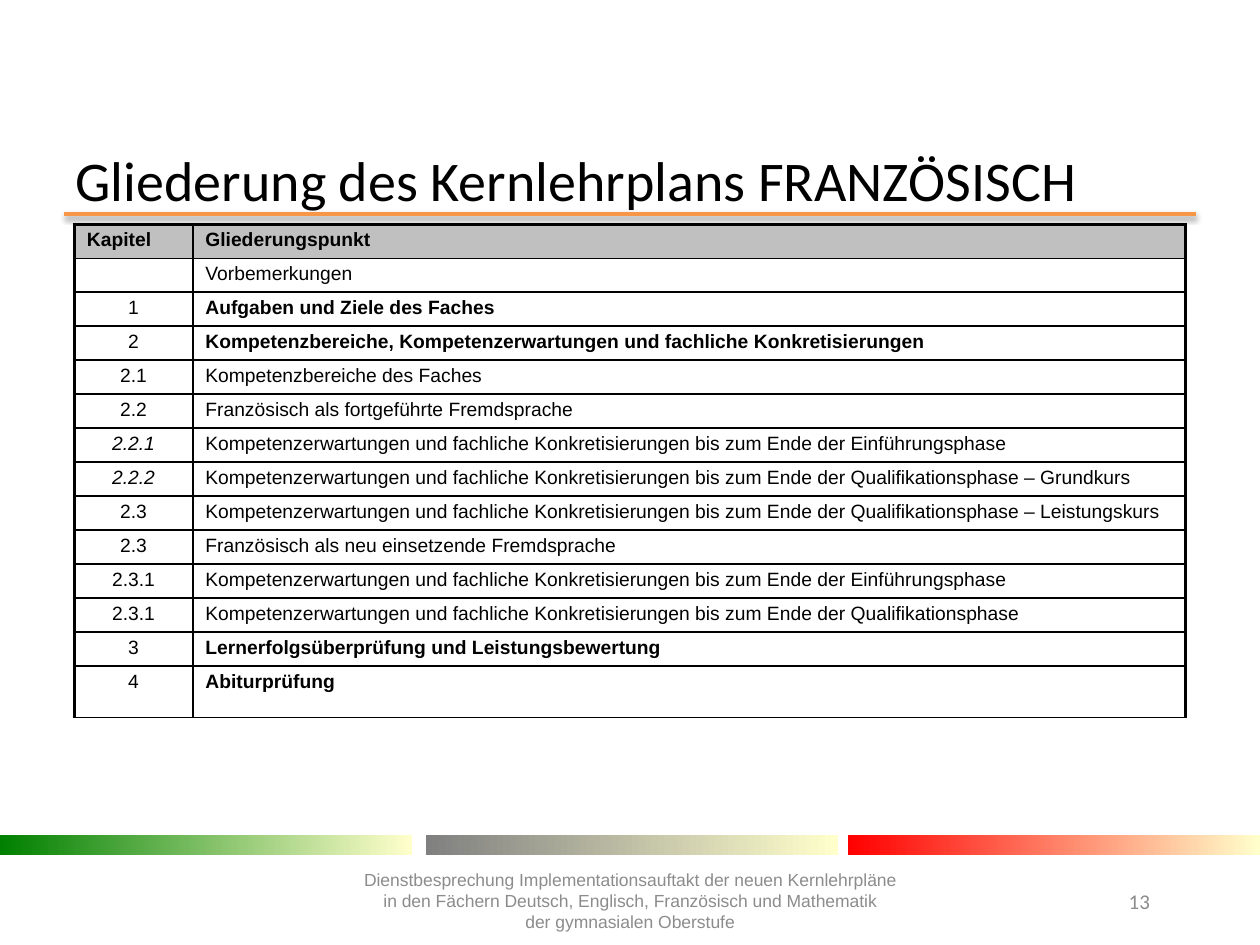
from lxml import etree
from pptx import Presentation
from pptx import util as u
from pptx.dml.color import RGBColor
from pptx.enum import shapes, text
from pptx.oxml import ns

BLACK = RGBColor(0x00, 0x00, 0x00)
FOOTER_GREY = RGBColor(0x8C, 0x8C, 0x8C)
HEADER_GREY = RGBColor(0xC0, 0xC0, 0xC0)
ORANGE = RGBColor(0xF7, 0x96, 0x46)
GREEN = RGBColor(0x00, 0x80, 0x00)
GREY = RGBColor(0x80, 0x80, 0x80)
RED = RGBColor(0xFF, 0x00, 0x00)
CREAM = RGBColor(0xFF, 0xFF, 0xCC)

EXPECTATIONS = "Kompetenzerwartungen und fachliche Konkretisierungen bis zum Ende der "
# chapter, heading, chapter is italic, heading is bold
CHAPTERS = [
    ("", "Vorbemerkungen", False, False),
    ("1", "Aufgaben und Ziele des Faches", False, True),
    ("2", "Kompetenzbereiche, Kompetenzerwartungen und fachliche Konkretisierungen", False, True),
    ("2.1", "Kompetenzbereiche des Faches", False, False),
    ("2.2", "Französisch als fortgeführte Fremdsprache", False, False),
    ("2.2.1", EXPECTATIONS + "Einführungsphase", True, False),
    ("2.2.2", EXPECTATIONS + "Qualifikationsphase – Grundkurs", True, False),
    ("2.3", EXPECTATIONS + "Qualifikationsphase – Leistungskurs", False, False),
    ("2.3", "Französisch als neu einsetzende Fremdsprache", False, False),
    ("2.3.1", EXPECTATIONS + "Einführungsphase", False, False),
    ("2.3.1", EXPECTATIONS + "Qualifikationsphase", False, False),
    ("3", "Lernerfolgsüberprüfung und Leistungsbewertung", False, True),
    ("4", "Abiturprüfung", False, True),
]
FOOTER = (
    "Dienstbesprechung Implementationsauftakt der neuen Kernlehrpläne\v"
    "in den Fächern Deutsch, Englisch, Französisch und Mathematik\v"
    "der gymnasialen Oberstufe"
)


def add_element(parent, tag, **attributes):
    return etree.SubElement(parent, ns.qn(tag), {k: str(v) for k, v in attributes.items()})


class SlideBuilder:
    heading_font = "Calibri"
    body_font = "Arial"
    thin, thick = u.Pt(1), u.Pt(2.25)

    def __init__(self, slide):
        self.slide = slide

    def set_text(self, frame, content, size, font, color=BLACK, align=text.PP_ALIGN.LEFT,
                 bold=False, italic=False):
        paragraph = frame.paragraphs[0]
        paragraph.text = content
        paragraph.alignment = align
        paragraph.font.size = u.Pt(size)
        paragraph.font.name = font
        paragraph.font.color.rgb = color
        paragraph.font.bold = bold
        paragraph.font.italic = italic
        if not content:
            add_element(paragraph._p, "a:endParaRPr", sz=size * 100)

    def title(self, content, left, top, width, height):
        title = self.slide.shapes.title
        title.left, title.top = u.Inches(left), u.Inches(top)
        title.width, title.height = u.Inches(width), u.Inches(height)
        frame = title.text_frame
        frame.auto_size = text.MSO_AUTO_SIZE.NONE
        frame.vertical_anchor = text.MSO_ANCHOR.MIDDLE
        self.set_text(frame, content, 32, self.heading_font)

    def text_box(self, content, left, top, width, height, size, font, align, anchor):
        box = self.slide.shapes.add_textbox(
            u.Inches(left), u.Inches(top), u.Inches(width), u.Inches(height))
        box.text_frame.word_wrap = True
        box.text_frame.vertical_anchor = anchor
        self.set_text(box.text_frame, content, size, font, FOOTER_GREY, align)

    def shadowed_rule(self, left, right, y):
        rule = self.slide.shapes.add_connector(
            shapes.MSO_CONNECTOR.STRAIGHT,
            u.Inches(left), u.Inches(y), u.Inches(right), u.Inches(y))
        rule.line.color.rgb = ORANGE
        rule.line.width = u.Pt(2)
        effects = add_element(rule._element.spPr, "a:effectLst")
        shadow = add_element(effects, "a:outerShdw", blurRad=u.Pt(3.1), dist=u.Pt(1.6),
                             dir=90 * 60000, rotWithShape=0)
        color = add_element(shadow, "a:srgbClr", val=BLACK)
        add_element(color, "a:alpha", val=38000)

    def gradient_bar(self, left, top, width, height, start_color):
        bar = self.slide.shapes.add_shape(
            shapes.MSO_SHAPE.RECTANGLE,
            u.Inches(left), u.Inches(top), u.Inches(width), u.Inches(height))
        bar.shadow.inherit = False
        bar.line.fill.background()
        bar.fill.gradient()
        bar.fill.gradient_angle = 0
        for stop, color, position in zip(bar.fill.gradient_stops, (start_color, CREAM), (0, 1)):
            stop.color.rgb = color
            stop.position = position

    def borders(self, cell, left, right, top, bottom):
        properties = cell._tc.get_or_add_tcPr()
        for side, width in zip("LRTB", (left, right, top, bottom)):
            line = add_element(properties, f"a:ln{side}", w=width)
            fill = add_element(line, "a:solidFill")
            add_element(fill, "a:srgbClr", val=BLACK)

    def cell(self, cell, content, is_header, is_first_column, **style):
        cell.margin_top = cell.margin_bottom = u.Inches(0.04)
        self.borders(
            cell,
            left=self.thick if is_first_column else self.thin,
            right=self.thin if is_first_column else self.thick,
            top=self.thick if is_header else self.thin,
            bottom=self.thin)
        if is_header:
            cell.fill.solid()
            cell.fill.fore_color.rgb = HEADER_GREY
        else:
            cell.fill.background()
        self.set_text(cell.text_frame, content, 11, self.body_font, **style)

    def chapter_table(self, left, top, column_widths, row_height, last_row_height):
        row_count = len(CHAPTERS) + 1
        height = row_height * (row_count - 1) + last_row_height
        table = self.slide.shapes.add_table(
            row_count, 2, u.Inches(left), u.Inches(top),
            u.Inches(sum(column_widths)), u.Inches(height)).table
        table.first_row = table.horz_banding = False
        for column, width in zip(table.columns, column_widths):
            column.width = u.Inches(width)
        for row in table.rows:
            row.height = u.Inches(row_height)
        table.rows[row_count - 1].height = u.Inches(last_row_height)

        for index, heading in enumerate(("Kapitel", "Gliederungspunkt")):
            self.cell(table.cell(0, index), heading, True, index == 0, bold=True)
        for index, (chapter, heading, italic, bold) in enumerate(CHAPTERS, start=1):
            self.cell(table.cell(index, 0), chapter, False, True,
                      align=text.PP_ALIGN.CENTER, italic=italic)
            self.cell(table.cell(index, 1), heading, False, False, bold=bold)


def main():
    presentation = Presentation()
    presentation.slide_width, presentation.slide_height = u.Inches(10), u.Inches(7.5)
    title_only = presentation.slide_layouts[5]
    builder = SlideBuilder(presentation.slides.add_slide(title_only))

    builder.shadowed_rule(0.51, 9.49, 1.7)
    for left, color in ((0, GREEN), (3.38, GREY), (6.73, RED)):
        builder.gradient_bar(left, 6.63, 3.27, 0.16, color)
    builder.title("Gliederung des Kernlehrplans FRANZÖSISCH", 0.5, 1.23, 9, 0.39)
    builder.chapter_table(0.59, 1.78, (0.94, 7.88), 0.27, 0.41)
    builder.text_box("13", 8.86, 7, 0.64, 0.4, 12, builder.heading_font,
                     text.PP_ALIGN.LEFT, text.MSO_ANCHOR.TOP)
    builder.text_box(FOOTER, 2.56, 6.87, 4.88, 0.56, 10, builder.body_font,
                     text.PP_ALIGN.CENTER, text.MSO_ANCHOR.MIDDLE)
    presentation.save("out.pptx")


if __name__ == "__main__":
    main()
